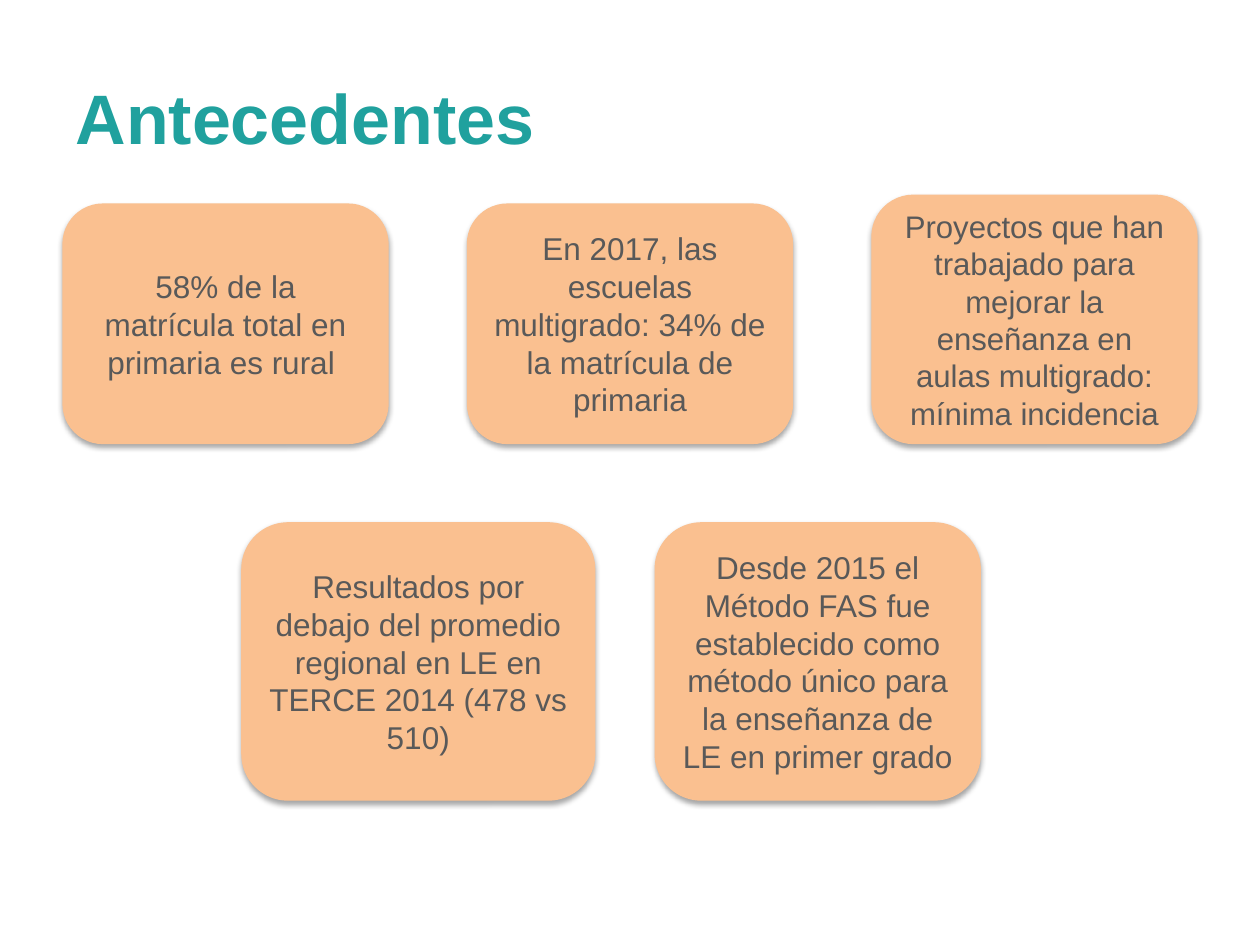
from dataclasses import dataclass

from lxml.etree import SubElement
from pptx import Presentation
from pptx.dml.color import RGBColor
from pptx.enum.shapes import MSO_SHAPE
from pptx.enum.text import MSO_ANCHOR, PP_ALIGN
from pptx.oxml.ns import qn
from pptx.shapes.autoshape import Shape
from pptx.slide import Slide
from pptx.text.text import Font
from pptx.util import Inches, Pt


@dataclass(frozen=True)
class Theme:
    font: str = "Arial"
    title_color: RGBColor = RGBColor(0x20, 0xA1, 0x9E)
    text_color: RGBColor = RGBColor(0x59, 0x59, 0x59)
    card_color: RGBColor = RGBColor(0xFA, 0xC0, 0x90)
    title_size: float = 40
    card_size: float = 18
    dense_size: float = 17.8


@dataclass(frozen=True)
class Card:
    text: str
    left: float
    top: float
    width: float
    height: float
    size: float


THEME = Theme()
MARGIN = 0.5
CARD_WIDTH = 2.58
COLUMN_STEP = 3.21
TOP_ROW, TOP_HEIGHT = 1.62, 1.9
BOTTOM_ROW, BOTTOM_HEIGHT = 4.15, 2.2
EXTRA_HEIGHT = 0.07  # the longest text grows its card upwards

CARDS = [
    Card("58% de la matrícula total en primaria es rural ",
         MARGIN, TOP_ROW, CARD_WIDTH, TOP_HEIGHT, THEME.card_size),
    Card("En 2017, las escuelas multigrado: 34% de la matrícula de primaria",
         MARGIN + COLUMN_STEP, TOP_ROW, CARD_WIDTH, TOP_HEIGHT, THEME.card_size),
    Card("Proyectos que han trabajado para mejorar la enseñanza en aulas "
         "multigrado: mínima incidencia",
         MARGIN + 2 * COLUMN_STEP, TOP_ROW - EXTRA_HEIGHT,
         CARD_WIDTH, TOP_HEIGHT + EXTRA_HEIGHT, THEME.dense_size),
    Card("Resultados por debajo del promedio regional en LE en TERCE 2014 (478 vs 510)",
         1.92, BOTTOM_ROW, 2.8, BOTTOM_HEIGHT, THEME.card_size),
    Card("Desde 2015 el Método FAS fue establecido como método único para "
         "la enseñanza de LE en primer grado",
         5.2, BOTTOM_ROW, CARD_WIDTH, BOTTOM_HEIGHT, THEME.card_size),
]


def style_font(font: Font, size: float, color: RGBColor, bold: bool = False) -> None:
    font.name = THEME.font
    font.size = Pt(size)
    font.bold = bold
    font.color.rgb = color


def add_soft_shadow(shape: Shape) -> None:
    """Replace the theme shadow with a faint one falling straight down."""
    shape.shadow.inherit = False
    effects = shape._element.spPr.find(qn("a:effectLst"))
    shadow = SubElement(effects, qn("a:outerShdw"), blurRad=str(Pt(3.1)),
                        dist=str(Pt(1.8)), dir="5400000", rotWithShape="0")
    color = SubElement(shadow, qn("a:srgbClr"), val="000000")
    SubElement(color, qn("a:alpha"), val="35000")


def add_title(slide: Slide, text: str) -> None:
    title = slide.shapes.title
    title.left, title.top = Inches(MARGIN), Inches(0.3)
    title.width, title.height = Inches(9), Inches(1.25)
    text_frame = title.text_frame
    text_frame.text = text
    text_frame.vertical_anchor = MSO_ANCHOR.MIDDLE
    paragraph = text_frame.paragraphs[0]
    paragraph.alignment = PP_ALIGN.LEFT
    style_font(paragraph.runs[0].font, THEME.title_size, THEME.title_color, bold=True)


def add_card(slide: Slide, card: Card) -> None:
    shape = slide.shapes.add_shape(
        MSO_SHAPE.ROUNDED_RECTANGLE, Inches(card.left), Inches(card.top),
        Inches(card.width), Inches(card.height))
    shape.fill.solid()
    shape.fill.fore_color.rgb = THEME.card_color
    shape.line.color.rgb = THEME.card_color
    shape.line.width = Pt(0.75)
    add_soft_shadow(shape)
    text_frame = shape.text_frame
    text_frame.word_wrap = True
    text_frame.vertical_anchor = MSO_ANCHOR.MIDDLE
    text_frame.text = card.text
    paragraph = text_frame.paragraphs[0]
    paragraph.alignment = PP_ALIGN.CENTER
    style_font(paragraph.runs[0].font, card.size, THEME.text_color)


def main() -> None:
    presentation = Presentation()
    presentation.slide_width, presentation.slide_height = Inches(10), Inches(7.5)
    slide = presentation.slides.add_slide(presentation.slide_layouts[5])
    add_title(slide, "Antecedentes")
    for card in CARDS:
        add_card(slide, card)
    presentation.save("out.pptx")


if __name__ == "__main__":
    main()
